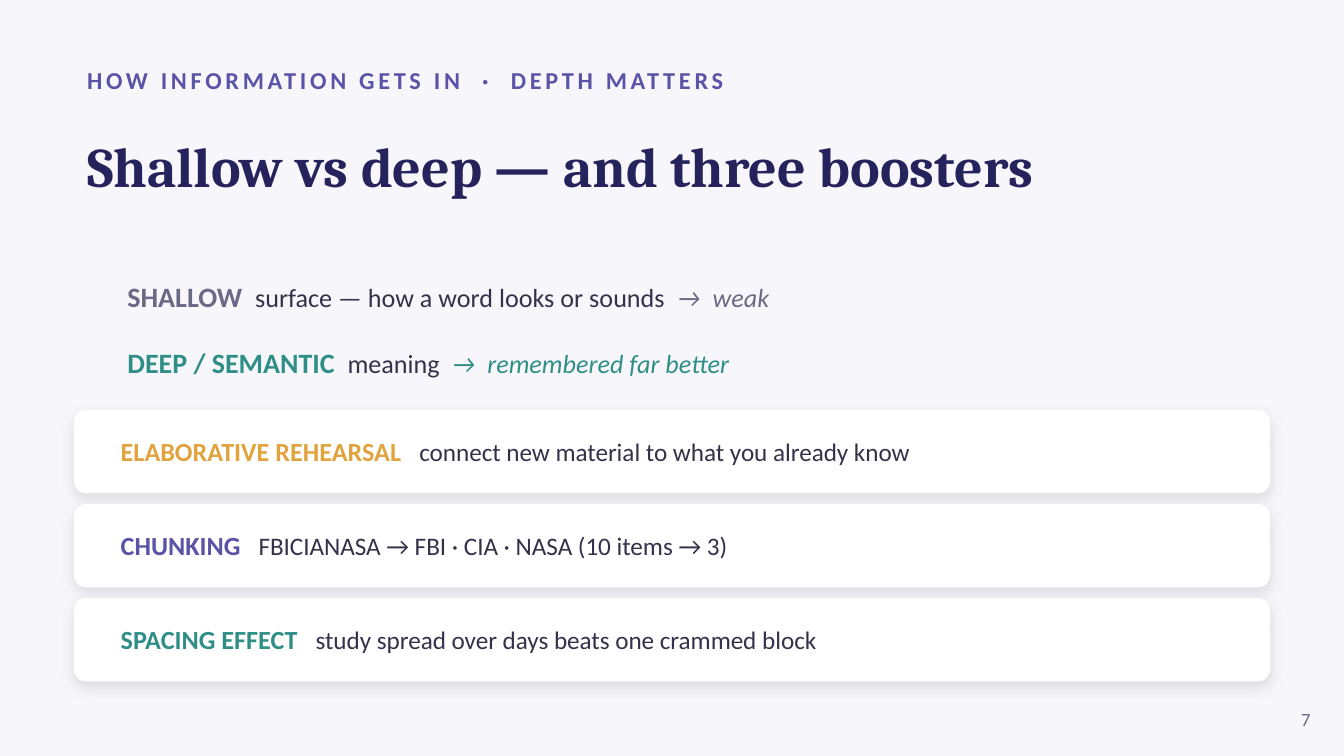
from dataclasses import dataclass

import pptx
import pptx.dml.color
import pptx.enum.shapes
import pptx.enum.text
import pptx.oxml
import pptx.oxml.ns
import pptx.util

Inches = pptx.util.Inches
ALIGN = pptx.enum.text.PP_ALIGN

INDIGO, NAVY, INK = "5B53A6", "26235C", "33324A"
GREY, TEAL, AMBER = "6B6A86", "2F8F86", "E0A33E"
WHITE, PAPER = "FFFFFF", "F7F7FB"

CARD_TOP, CARD_HEIGHT, CARD_STEP = 3.05, 0.62, 0.70
LINE_GAP = 17

SHADOW = (
    f'<a:outerShdw {pptx.oxml.ns.nsdecls("a")} blurRad="{pptx.util.Pt(7)}" '
    f'dist="{pptx.util.Pt(3)}" dir="5400000" algn="ctr" rotWithShape="0">'
    '<a:srgbClr val="000000"><a:alpha val="10000"/></a:srgbClr></a:outerShdw>'
)


@dataclass(frozen=True)
class Span:
    text: str
    size: float
    color: str
    bold: bool = False
    italic: bool = False
    font: str = "Calibri"
    spacing: float = 0


@dataclass(frozen=True)
class Booster:
    name: str
    detail: str
    color: str


BOOSTERS = [
    Booster("ELABORATIVE REHEARSAL", "connect new material to what you already know", AMBER),
    Booster("CHUNKING", "FBICIANASA → FBI · CIA · NASA (10 items → 3)", INDIGO),
    Booster("SPACING EFFECT", "study spread over days beats one crammed block", TEAL),
]


def rgb(value: str) -> pptx.dml.color.RGBColor:
    return pptx.dml.color.RGBColor.from_string(value)


def add_text(page, left: float, top: float, width: float, height: float,
             lines: list[list[Span]], align=ALIGN.LEFT) -> None:
    """Place a middle-anchored text box with one paragraph per line."""
    box = page.shapes.add_textbox(Inches(left), Inches(top), Inches(width), Inches(height))
    frame = box.text_frame
    frame.word_wrap = True
    frame.vertical_anchor = pptx.enum.text.MSO_ANCHOR.MIDDLE
    for index, line in enumerate(lines):
        para = frame.add_paragraph() if index else frame.paragraphs[0]
        para.alignment = align
        if index:
            para.space_before = pptx.util.Pt(LINE_GAP)
        for span in line:
            run = para.add_run()
            run.text = span.text
            formats = {"name": span.font, "size": pptx.util.Pt(span.size),
                       "bold": span.bold, "italic": span.italic}
            for key, value in formats.items():
                setattr(run.font, key, value)
            run.font.color.rgb = rgb(span.color)
            if span.spacing:
                run.font._element.set("spc", str(round(span.spacing * 100)))


def add_card(page, top: float, booster: Booster) -> None:
    """Draw a white rounded card with a soft shadow and its text."""
    card = page.shapes.add_shape(
        pptx.enum.shapes.MSO_SHAPE.ROUNDED_RECTANGLE,
        Inches(0.55), Inches(top), Inches(8.9), Inches(CARD_HEIGHT))
    card.adjustments[0] = 0.145
    card.fill.solid()
    card.fill.fore_color.rgb = rgb(WHITE)
    card.line.fill.background()
    card.shadow.inherit = False
    effects = card._element.spPr.find(pptx.oxml.ns.qn("a:effectLst"))
    effects.append(pptx.oxml.parse_xml(SHADOW))
    add_text(page, 0.8, top + 0.08, 8.4, 0.45, [[
        Span(f"{booster.name}   ", 14, booster.color, bold=True),
        Span(booster.detail, 13.5, INK),
    ]])


def depth_line(label: str, meaning: str, result: str, color: str) -> list[Span]:
    return [
        Span(f"{label}  ", 15, color, bold=True),
        Span(f"{meaning}  ", 14, INK),
        Span(f"→  {result}", 14, color, italic=True),
    ]


def main() -> None:
    deck = pptx.Presentation()
    deck.slide_width = Inches(10)
    deck.slide_height = deck.slide_width * 9 // 16
    page = deck.slides.add_slide(deck.slide_layouts[6])
    page.background.fill.solid()
    page.background.fill.fore_color.rgb = rgb(PAPER)

    # Heading
    add_text(page, 0.55, 0.42, 9, 0.35, [[
        Span("HOW INFORMATION GETS IN  ·  DEPTH MATTERS", 13, INDIGO, bold=True, spacing=2)]])
    add_text(page, 0.55, 0.78, 8.9, 0.9, [[
        Span("Shallow vs deep — and three boosters", 30, NAVY, bold=True, font="Cambria")]])

    # Shallow and deep processing
    add_text(page, 0.85, 1.95, 8.4, 1, [
        depth_line("SHALLOW", "surface — how a word looks or sounds", "weak", GREY),
        depth_line("DEEP / SEMANTIC", "meaning", "remembered far better", TEAL),
    ])

    # Booster cards
    for index, booster in enumerate(BOOSTERS):
        add_card(page, CARD_TOP + index * CARD_STEP, booster)

    # Page number
    add_text(page, 9.35, 5.2, 0.5, 0.3, [[Span("7", 10, GREY)]], ALIGN.RIGHT)

    deck.save("out.pptx")


if __name__ == "__main__":
    main()
